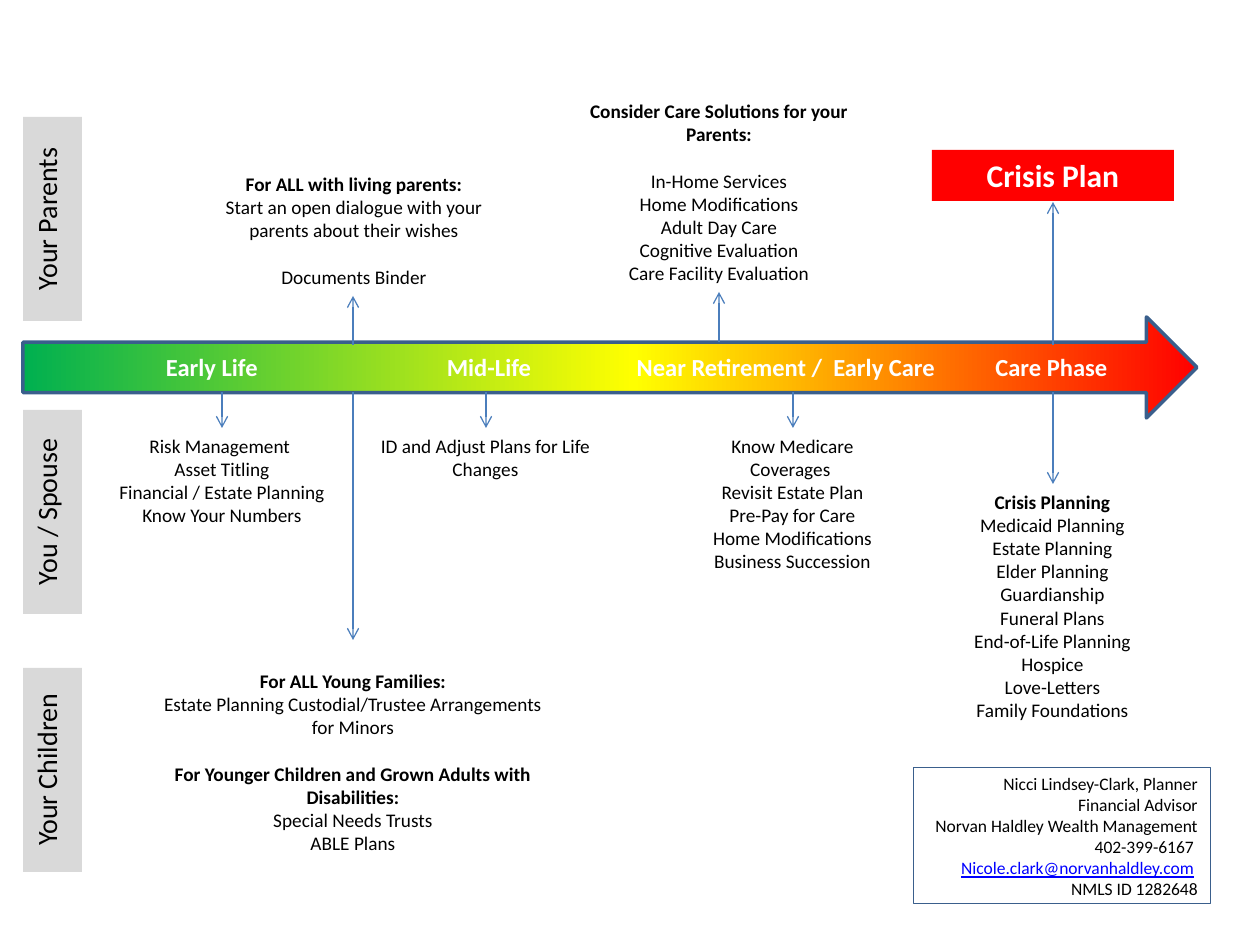
from copy import deepcopy

from pptx import Presentation
from pptx.dml.color import RGBColor
from pptx.enum.shapes import MSO_CONNECTOR, MSO_SHAPE
from pptx.enum.text import MSO_ANCHOR, PP_ALIGN
from pptx.oxml.ns import qn
from pptx.oxml.xmlchemy import OxmlElement
from pptx.util import Pt

PX = 914400 / 126
RECT, ARROW = MSO_SHAPE.RECTANGLE, MSO_SHAPE.RIGHT_ARROW
LINE, TOP = MSO_CONNECTOR.STRAIGHT, MSO_ANCHOR.TOP
CENTER, RIGHT = PP_ALIGN.CENTER, PP_ALIGN.RIGHT
BLACK, WHITE, RED, GRAY = "000000", "FFFFFF", "FF0000", "D9D9D9"
NAVY, BLUE, LINK = "3A5F8C", "4B7EBC", "0000FF"
SPECTRUM = [(0, "00B050"), (0.52, "FFFF00"), (1, RED)]

LABELS = [("Your Parents", 117), ("You / Spouse", 410), ("Your Children", 668)]
PHASES = [
    ("Early Life", 68, 242),
    ("Mid-Life", 345, 242),
    ("Near Retirement /  Early Care", 565, 396),
    ("Care Phase", 929, 199),
]
STEMS = [
    (353, 345, 296), (719, 342, 292), (1053, 345, 202),
    (222, 392, 428), (486, 392, 428), (793, 392, 428),
    (1053, 392, 484), (353, 392, 640),
]
NOTES = [
    ((212, 166, 284, 130), [
        "*For ALL with living parents:",
        "Start an open dialogue with your parents about their wishes",
        "+Documents Binder"]),
    ((577, 93, 284, 199), [
        "*Consider Care Solutions for your Parents:",
        "+In-Home Services", "Home Modifications", "Adult Day Care",
        "Cognitive Evaluation", "Care Facility Evaluation"]),
    ((82, 428, 280, 106), [
        "Risk Management ", "Asset Titling",
        "Financial / Estate Planning", "Know Your Numbers"]),
    ((367, 428, 237, 59), ["ID and Adjust Plans for Life Changes"]),
    ((693, 428, 199, 176), [
        "Know Medicare Coverages ", "Revisit Estate Plan",
        "Pre-Pay for Care", "Home Modifications", "Business Succession"]),
    ((953, 484, 199, 246), [
        "*Crisis Planning", "Medicaid Planning", "Estate Planning",
        "Elder Planning", "Guardianship", "Funeral Plans",
        "End-of-Life Planning", "Hospice", "Love-Letters",
        "Family Foundations"]),
    ((140, 663, 426, 200), [
        "*For ALL Young Families:",
        "Estate Planning Custodial/Trustee Arrangements for Minors",
        "+*For Younger Children and Grown Adults with Disabilities:",
        "Special Needs Trusts", "ABLE Plans"]),
]
CONTACT = [
    "Nicci Lindsey-Clark, Planner", "Financial Advisor",
    "Norvan Haldley Wealth Management", "402-399-6167 ",
    "Nicole.clark@norvanhaldley.com", "NMLS ID 1282648",
]


def px(*sizes):
    """Turn px lengths into EMU."""
    return [round(size * PX) for size in sizes]


def rgb(code):
    """Turn a hex string into a colour."""
    return RGBColor.from_string(code)


def write(shape, lines, size, color=BLACK, align=CENTER):
    """Fill a shape with lines; + leaves a gap before, * makes bold."""
    frame = shape.text_frame
    frame.word_wrap = True
    frame.vertical_anchor = TOP
    for i, line in enumerate(lines):
        para = frame.paragraphs[0] if i == 0 else frame.add_paragraph()
        if line.startswith("+"):
            para.space_before = Pt(size * 1.22)
        line = line.lstrip("+")
        para.alignment = align
        font = para.font
        font.name, font.size = "Calibri", Pt(size)
        font.bold = line.startswith("*")
        font.color.rgb = rgb(color)
        para.add_run().text = line.lstrip("*")
    return frame


def text(slide, box, lines, size, color=BLACK):
    """Place a text box."""
    write(slide.shapes.add_textbox(*px(*box)), lines, size, color)


def block(slide, box, fill=None, kind=RECT):
    """Place a flat shape without an outline."""
    shape = slide.shapes.add_shape(kind, *px(*box))
    shape.shadow.inherit = False
    shape.line.fill.background()
    if fill:
        shape.fill.solid()
        shape.fill.fore_color.rgb = rgb(fill)
    else:
        shape.fill.background()
    return shape


def edge(shape, width):
    """Outline a shape in navy."""
    shape.line.color.rgb = rgb(NAVY)
    shape.line.width = Pt(width)


def label(slide, box, name):
    """Place an upright row label."""
    frame = write(block(slide, box, GRAY), [name], 16)
    frame._txBody.bodyPr.set("vert", "vert270")


def band(slide, box):
    """Place the life arrow with its phase names."""
    left, top, _, _ = box
    arrow = block(slide, box, kind=ARROW)
    edge(arrow, 2)
    fill = arrow.fill
    fill.gradient()
    fill.gradient_angle = 0
    stops = arrow._element.spPr.find(".//" + qn("a:gsLst"))
    stops.append(deepcopy(stops[0]))
    for stop, (place, color) in zip(fill.gradient_stops, SPECTRUM):
        stop.position = place
        stop.color.rgb = rgb(color)
    for name, dx, width in PHASES:
        text(slide, (left + dx, top + 29, width, 43), ["*" + name], 14, WHITE)


def stem(slide, x, start, end):
    """Draw an upright line with an open arrowhead."""
    line = slide.shapes.add_connector(LINE, *px(x, start, x, end))
    line.line.color.rgb = rgb(BLUE)
    line.line.width = Pt(0.75)
    tip = OxmlElement("a:tailEnd")
    tip.set("type", "arrow")
    line.line._get_or_add_ln().append(tip)
    line._element.spPr.append(OxmlElement("a:effectLst"))


def contact(slide, box):
    """Place the framed adviser details."""
    card = block(slide, box)
    edge(card, 0.25)
    para = write(card, CONTACT, 10, align=RIGHT).paragraphs[4]
    mail = para.runs[0].font
    mail.color.rgb = rgb(LINK)
    mail.underline = True
    para.add_run().text = " "


def main():
    """Build the slide."""
    deck = Presentation()
    deck.slide_width, deck.slide_height = px(1260, 945)
    slide = deck.slides.add_slide(deck.slide_layouts[6])
    for name, top in LABELS:
        label(slide, (23, top, 59, 204), name)
    for box, lines in NOTES:
        text(slide, box, lines, 11)
    band(slide, (23, 317, 1174, 101))
    for x, start, end in STEMS:
        stem(slide, x, start, end)
    write(block(slide, (932, 150, 242, 51), RED), ["*Crisis Plan"], 18, WHITE)
    contact(slide, (913, 767, 297, 136))
    deck.save("out.pptx")


if __name__ == "__main__":
    main()
